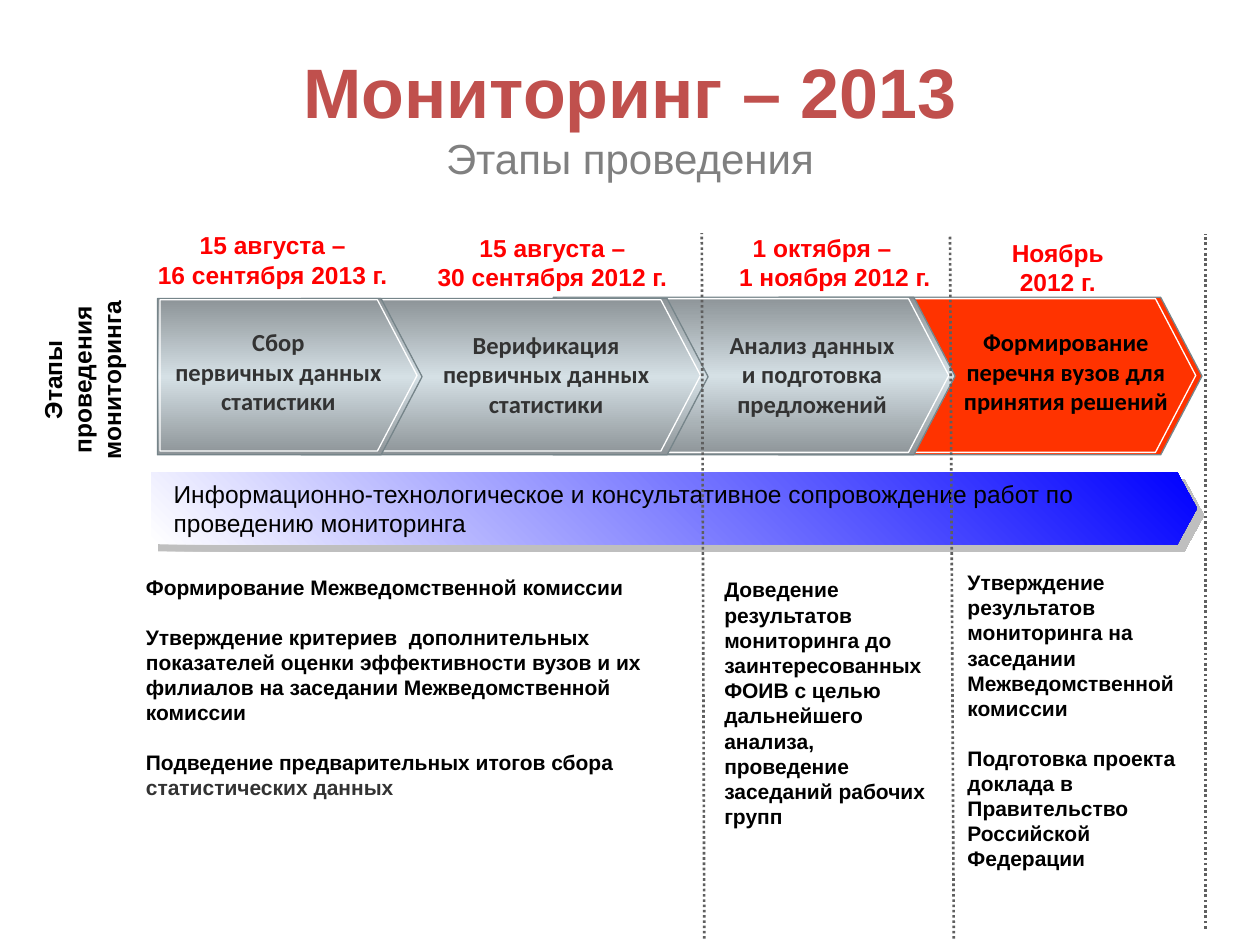
from lxml import etree
from pptx import Presentation
from pptx.dml.color import RGBColor
from pptx.enum.dml import MSO_LINE
from pptx.enum.shapes import MSO_CONNECTOR, MSO_SHAPE
from pptx.enum.text import MSO_ANCHOR, PP_ALIGN
from pptx.oxml import parse_xml
from pptx.oxml.ns import nsdecls, qn
from pptx.util import Inches, Pt

COLORS = {
    "title": "C0504D", "subtitle": "808080", "date": "FF0000",
    "dark": "333333", "black": "000000", "white": "FFFFFF",
    "edge": "76858A", "steel": "8D9498", "shine": "D5E0E5",
    "final": "FF3300", "blue": "0000FF", "dots": "5F5F5F", "shadow": "808080",
}
RGB = {name: RGBColor.from_string(value) for name, value in COLORS.items()}

prs = Presentation()
prs.slide_width, prs.slide_height = Inches(10), Inches(7.5)
s = prs.slides.add_slide(prs.slide_layouts[6])


def add_text(box, paragraphs, size=14, color="black", bold=True, font="Arial",
             align=PP_ALIGN.CENTER, wrap=True, gap=0, shadow=False):
    """Each paragraph is a list of (text, overrides); a newline breaks the line."""
    sp = s.shapes.add_textbox(*map(Inches, box))
    tf = sp.text_frame
    tf.word_wrap = wrap
    for i, runs in enumerate(paragraphs):
        p = tf.paragraphs[0] if i == 0 else tf.add_paragraph()
        p.alignment = align
        if i:
            p.space_before = Pt(gap)
        for text, changes in runs:
            style = {"size": Pt(size), "bold": bold, "name": font, "color": color} | changes
            for j, line in enumerate(text.split("\n")):
                if j:
                    p.add_line_break()
                r = p.add_run()
                r.text = line
                r.font.color.rgb = RGB[style["color"]]
                for key in ("size", "bold", "name"):
                    setattr(r.font, key, style[key])
                if shadow:
                    r.font.fill._xPr.find(qn("a:solidFill")).addnext(parse_xml(
                        f'<a:effectLst {nsdecls("a")}><a:outerShdw dist="17961" dir="2700000">'
                        '<a:srgbClr val="C0C0C0"/></a:outerShdw></a:effectLst>'))
    return sp


def add_arrow(box, adj, line=None, fill=None, stops=None, angle=90):
    sp = s.shapes.add_shape(MSO_SHAPE.PENTAGON, *map(Inches, box))
    sp.adjustments[0] = adj
    sp.shadow.inherit = False
    if line:
        sp.line.color.rgb = RGB[line]
        sp.line.width = Pt(0.75)
    else:
        sp.line.fill.background()
    if fill:
        sp.fill.solid()
        sp.fill.fore_color.rgb = RGB[fill]
    elif stops:
        gs = "".join(f'<a:gs pos="{pos * 1000}"><a:srgbClr val="{COLORS[c]}"/></a:gs>'
                     for pos, c in stops)
        sp._element.spPr.find(qn("a:prstGeom")).addnext(parse_xml(
            f'<a:gradFill {nsdecls("a")} rotWithShape="1"><a:gsLst>{gs}</a:gsLst>'
            f'<a:lin ang="{angle * 60000}" scaled="1"/></a:gradFill>'))
    else:
        sp.fill.background()
    return sp


# Stage arrows, last stage at the back, each with a white inner outline
steel = [(0, "steel"), (50, "shine"), (100, "steel")]
for outer, inner, fill in [
    ((6.18, 2.36, 3.36, 1.25), (6.22, 2.37, 3.27, 1.22), "final"),
    ((4.39, 2.36, 3.19, 1.25), (4.42, 2.37, 3.11, 1.22), None),
    ((2.39, 2.37, 3.23, 1.24), (2.42, 2.38, 3.14, 1.2), None),
    ((1.25, 2.37, 2.1, 1.24), (1.27, 2.38, 2.04, 1.2), None),
]:
    add_arrow(outer, 0.262, "edge", fill, steel)
    add_arrow(inner, 0.262, "white", fill)

# Support bar with a hard grey shadow
bar = add_arrow((1.2, 3.75, 8.3, 0.57), 0.273,
                stops=[(0, "white"), (100, "blue")], angle=315)
effects = bar._element.spPr.find(qn("a:effectLst"))
effects.append(parse_xml(
    f'<a:outerShdw {nsdecls("a")} dist="{Pt(5.7)}" dir="2700000" algn="ctr" rotWithShape="0">'
    f'<a:srgbClr val="{COLORS["shadow"]}"><a:alpha val="50000"/></a:srgbClr></a:outerShdw>'))
add_text((1.28, 3.75, 7.84, 0.57),
         [[("Информационно-технологическое и консультативное сопровождение работ по "
            "проведению мониторинга", {})]], bold=False, align=PP_ALIGN.LEFT)

# Dotted column dividers
for x1, y1, x2, y2 in [(9.57, 7.37, 9.57, 1.86), (5.59, 7.45, 5.57, 1.85),
                       (7.57, 7.45, 7.54, 1.86)]:
    cn = s.shapes.add_connector(MSO_CONNECTOR.STRAIGHT, *map(Inches, (x1, y1, x2, y2)))
    cn.line.color.rgb = RGB["dots"]
    cn.line.width = Pt(1.5)
    cn.line.dash_style = MSO_LINE.ROUND_DOT
    etree.SubElement(cn._element.spPr, qn("a:effectLst"))

# Title
title = add_text((0.5, 0.29, 9, 1.25), [[
    ("Мониторинг – 2013\n", {"size": Pt(40), "color": "title"}),
    ("Этапы проведения", {"size": Pt(24), "color": "subtitle", "bold": False})]])
title.text_frame.vertical_anchor = MSO_ANCHOR.MIDDLE

# Row label
label = add_text((-0.08, 2.61, 1.47, 0.81),
                 [[("Этапы\nпроведения", {})], [("мониторинга", {})]], wrap=False)
label.rotation = 270

# Dates
for box, lines, wrap in [
    ((1.15, 1.78, 2.03, 0.57), ("15 августа –", "16 сентября 2013 г."), False),
    ((3.37, 1.8, 2.03, 0.57), ("15 августа –", "30 сентября 2012 г."), False),
    ((5.5, 1.8, 2.05, 0.57), ("1 октября –", "1 ноября 2012 г."), True),
    ((7.37, 1.84, 2.05, 0.57), ("Ноябрь", "2012 г."), True),
]:
    date = add_text(box, [[(line, {})] for line in lines], color="date", wrap=wrap)
    if lines[0] == "1 октября –":
        date.text_frame.paragraphs[1]._p.get_or_add_pPr().set("marL", str(Inches(0.2)))

# Stage names
for box, text, color in [
    ((1.22, 2.55, 1.98, 1.04), "Сбор\nпервичных данных статистики", "dark"),
    ((3.36, 2.57, 1.95, 1.04), "Верификация\nпервичных данных статистики", "dark"),
    ((5.29, 2.57, 2.31, 0.81), "Анализ данных\nи подготовка\nпредложений", "dark"),
    ((7.47, 2.55, 1.98, 1.04), "Формирование перечня вузов для принятия решений", "black"),
]:
    add_text(box, [[(text, {})]], color=color, font="Calibri", shadow=True)

# Tasks under the stages
for box, paragraphs in [
    ((1.06, 4.51, 4.24, 1.92), [
        [("Формирование Межведомственной комиссии", {})],
        [("Утверждение критериев  дополнительных показателей оценки эффективности вузов "
          "и их филиалов на заседании Межведомственной комиссии", {})],
        [("Подведение предварительных итогов сбора ", {}),
         ("статистических данных", {"color": "dark"})]]),
    ((5.65, 4.53, 1.94, 2.12), [
        [("Доведение результатов мониторинга до заинтересованных ФОИВ с целью "
          "дальнейшего анализа, проведение заседаний рабочих групп", {})]]),
    ((7.58, 4.47, 1.98, 2.52), [
        [("Утверждение результатов мониторинга на заседании Межведомственной комиссии", {})],
        [("Подготовка проекта доклада в Правительство Российской Федерации", {})]]),
]:
    add_text(box, paragraphs, size=12, align=PP_ALIGN.LEFT, gap=14)

prs.save("out.pptx")
